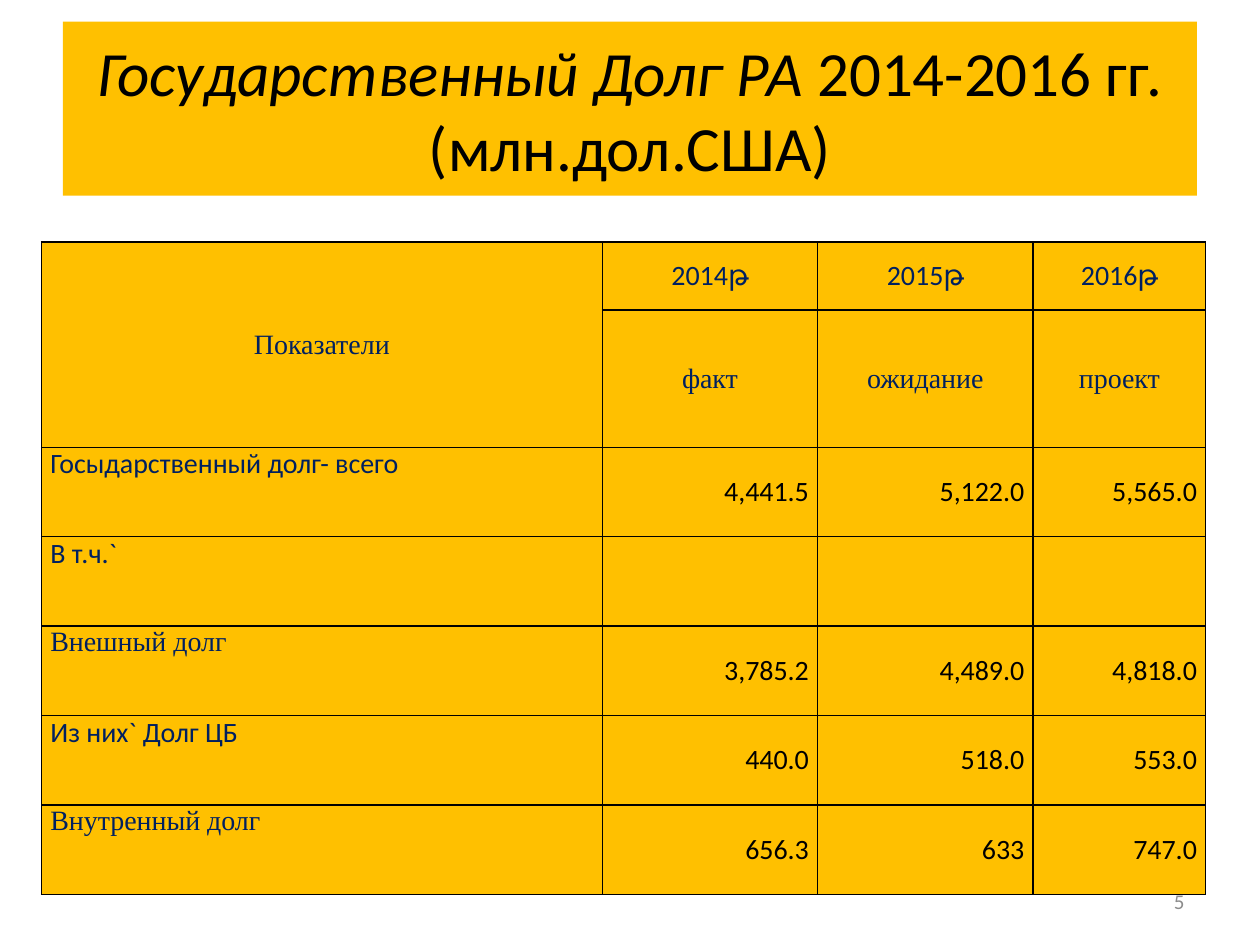
from lxml.etree import SubElement
from pptx import Presentation
from pptx.dml.color import RGBColor
from pptx.enum.shapes import MSO_SHAPE as Shape
from pptx.enum.text import MSO_ANCHOR as Anchor, PP_ALIGN as Align
from pptx.oxml.ns import qn
from pptx.util import Inches, Pt

COLORS = {"gold": "FFC000", "navy": "002060", "black": "000000", "gray": "8C8C8C"}
SANS, SERIF = "Calibri", "Times New Roman"
WIDTH, HEIGHT = Inches(10), Inches(7.5)
COLUMN_WIDTHS = [4.45, 1.71, 1.71, 1.37]
ROW_HEIGHTS = [0.54, 1.09] + [0.71] * 5
HEADERS = [
    (["Показатели", "2014թ", "2015թ", "2016թ"], SANS, 0),
    (["", "факт", "ожидание", "проект"], SERIF, 2),
]
DEBTS = [
    ("Госыдарственный долг- всего", SANS, ["4,441.5", "5,122.0", "5,565.0"]),
    ("В т.ч.`", SANS, ["", "", ""]),
    ("Внешный долг", SERIF, ["3,785.2", "4,489.0", "4,818.0"]),
    ("Из них` Долг ЦБ", SANS, ["440.0", "518.0", "553.0"]),
    ("Внутренный долг", SERIF, ["656.3", "633", "747.0"]),
]


def color(name):
    """Return the named colour."""
    return RGBColor.from_string(COLORS[name])


def place(left, top, width, height):
    """Turn shares of the slide's size into lengths."""
    return [int(share * side) for share, side in
            zip((left, top, width, height), (WIDTH, HEIGHT) * 2)]


def style(paragraph, align, size, font_name, color_name):
    """Set the alignment and font of a paragraph."""
    paragraph.alignment = align
    font = paragraph.font
    font.size, font.name = Pt(size), font_name
    font.color.rgb = color(color_name)


def add_title(slide):
    """Add the gold title band."""
    shape = slide.shapes.add_shape(Shape.RECTANGLE, *place(0.05, 0.023, 0.9, 0.184))
    shape.shadow.inherit = False
    shape.fill.solid()
    shape.fill.fore_color.rgb = color("gold")
    shape.line.fill.background()
    frame = shape.text_frame
    frame.word_wrap = True
    frame.vertical_anchor = Anchor.MIDDLE
    paragraph = frame.paragraphs[0]
    style(paragraph, Align.CENTER, 36, SANS, "black")
    for text, italic in [("Государственный Долг РА", True),
                         (" 2014-2016 гг. (млн.дол.США)", False)]:
        run = paragraph.add_run()
        run.text, run.font.italic = text, italic


def add_page_number(slide):
    """Add the page number at the lower right."""
    frame = slide.shapes.add_textbox(*place(0.717, 0.927, 0.233, 0.053)).text_frame
    frame.word_wrap = True
    frame.vertical_anchor = Anchor.MIDDLE
    frame.text = "5"
    style(frame.paragraphs[0], Align.RIGHT, 12, SANS, "gray")


def add_borders(cell):
    """Draw a thin black line on each side of a cell."""
    properties = cell._tc.get_or_add_tcPr()
    for side in "LRTB":
        line = SubElement(properties, qn(f"a:ln{side}"), w=str(Pt(1)))
        fill = SubElement(line, qn("a:solidFill"))
        SubElement(fill, qn("a:srgbClr"), val=COLORS["black"])


def format_cell(cell):
    """Give a cell its borders, fill and margins."""
    add_borders(cell)
    cell.fill.solid()
    cell.fill.fore_color.rgb = color("gold")
    cell.margin_left = cell.margin_right = Inches(0.07)
    cell.margin_top = cell.margin_bottom = 0


def write_cell(cell, text, align, font_name, color_name, anchor=Anchor.MIDDLE, space=0):
    """Write one styled paragraph into a cell."""
    cell.vertical_anchor = anchor
    cell.text = text
    paragraph = cell.text_frame.paragraphs[0]
    style(paragraph, align, 16, font_name, color_name)
    paragraph.space_before = paragraph.space_after = Pt(space)


def add_debt_table(slide):
    """Add the table of debt by year."""
    table = slide.shapes.add_table(len(ROW_HEIGHTS), len(COLUMN_WIDTHS),
                                   *place(0.033, 0.256, 0.925, 0.69)).table
    for column, width in zip(table.columns, COLUMN_WIDTHS):
        column.width = Inches(width)
    for row, height in zip(table.rows, ROW_HEIGHTS):
        row.height = Inches(height)
    for cell in table.iter_cells():
        format_cell(cell)
    for row, (labels, font_name, space) in enumerate(HEADERS):
        for column, label in enumerate(labels):
            write_cell(table.cell(row, column), label, Align.CENTER,
                       font_name if column else SERIF, "navy", space=space)
    table.cell(0, 0).merge(table.cell(1, 0))
    for row, (label, font_name, values) in enumerate(DEBTS, len(HEADERS)):
        write_cell(table.cell(row, 0), label, Align.LEFT, font_name, "navy", Anchor.TOP)
        for column, value in enumerate(values, 1):
            write_cell(table.cell(row, column), value, Align.RIGHT, SANS, "black")


def main():
    """Build and save the slide."""
    presentation = Presentation()
    presentation.slide_width, presentation.slide_height = WIDTH, HEIGHT
    slide = presentation.slides.add_slide(presentation.slide_layouts[6])
    add_title(slide)
    add_page_number(slide)
    add_debt_table(slide)
    presentation.save("out.pptx")


if __name__ == "__main__":
    main()
